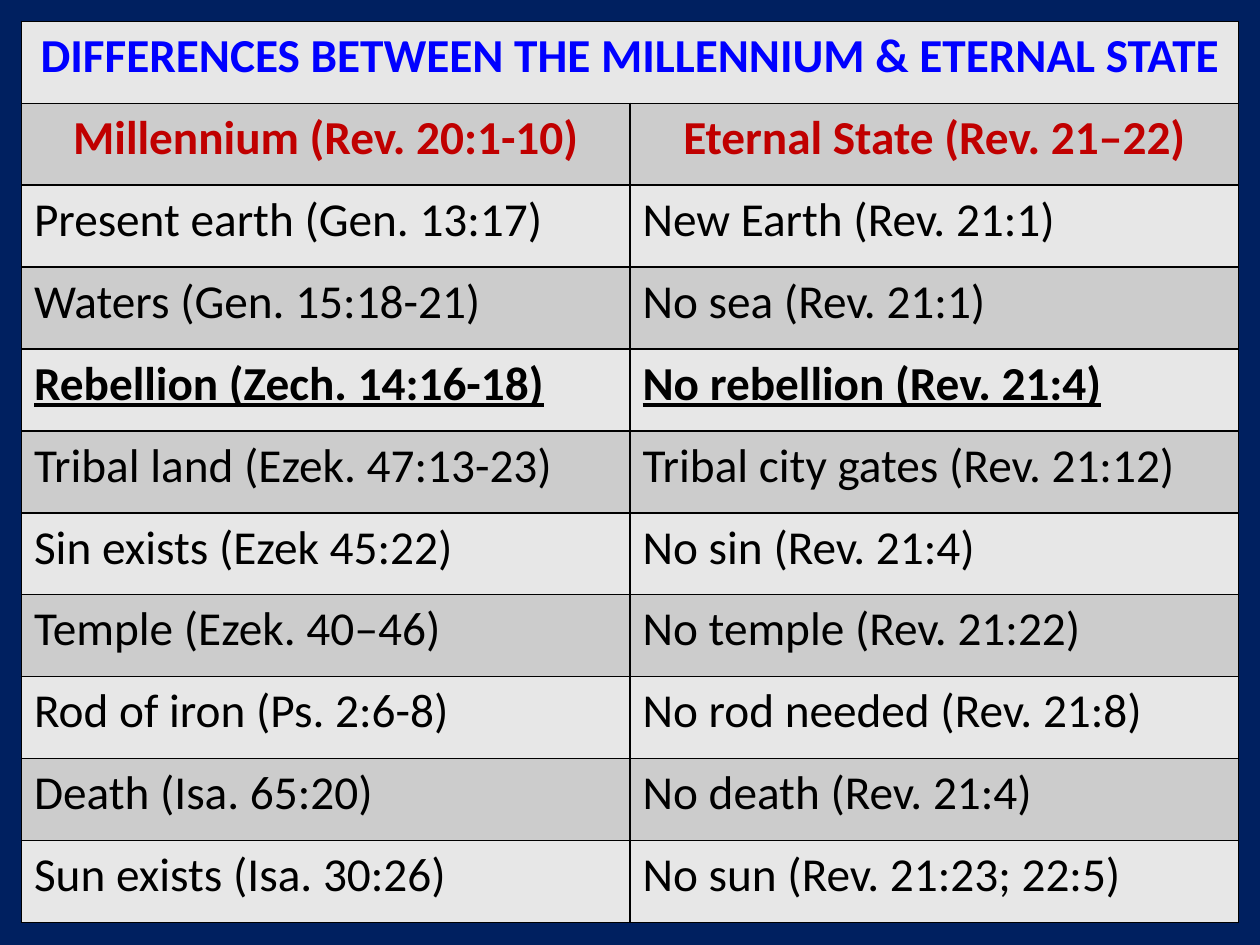
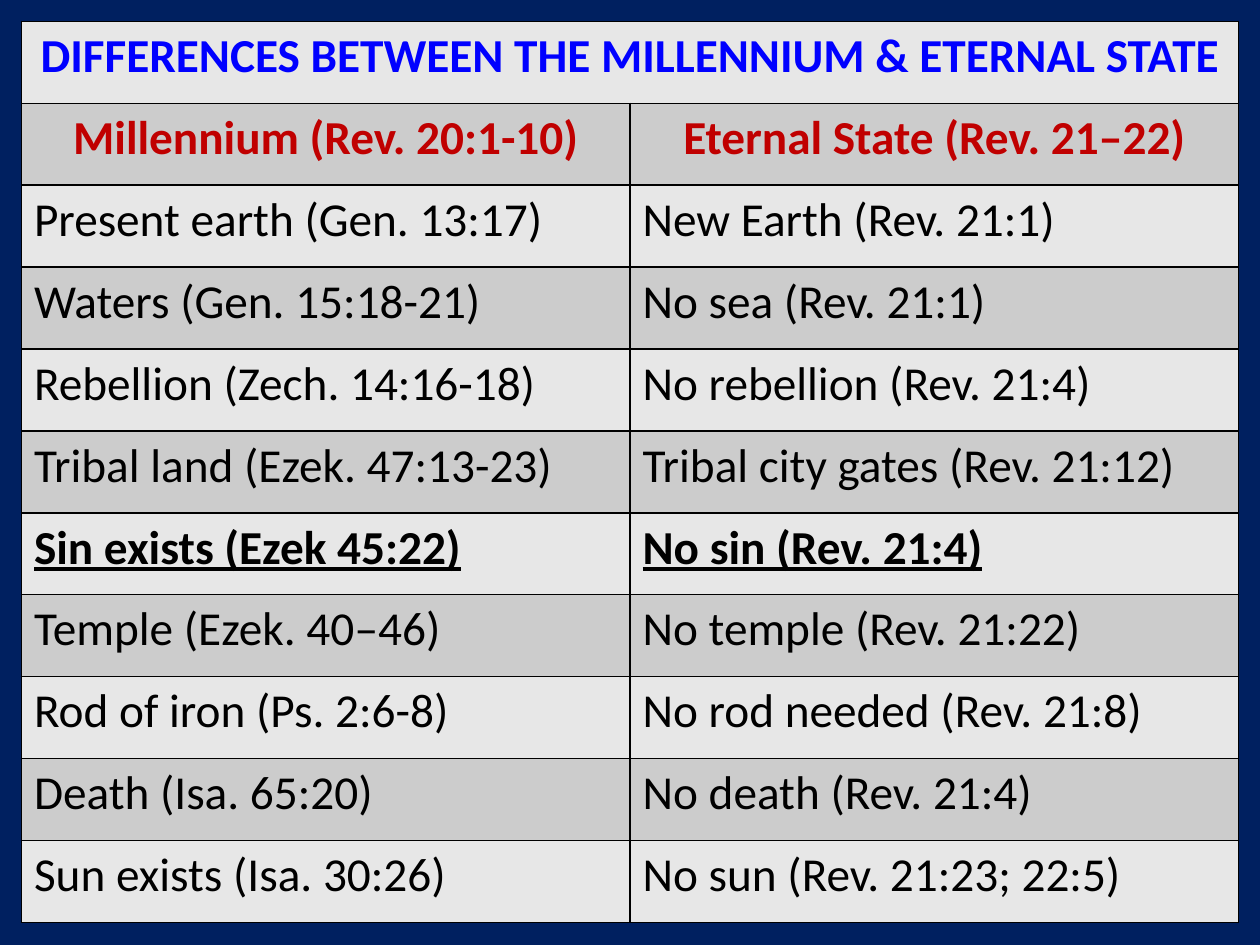
from lxml.etree import SubElement
from pptx import Presentation
from pptx.dml.color import RGBColor as RGB
from pptx.enum.text import MSO_ANCHOR as Anchor, PP_ALIGN as Align
from pptx.oxml.ns import qn
from pptx.util import Inches, Pt

COLORS = {
    "back": "002060",
    "light": "E7E7E7",
    "dark": "CCCCCC",
    "title": "0000FF",
    "head": "C00000",
    "text": "000000",
    "line": "000000",
}
FONT = "Calibri"
SIZE = 27
EDGE = 0.17
COL_W = 4.83
ROW_H = 0.65

TITLE = "DIFFERENCES BETWEEN THE MILLENNIUM & ETERNAL STATE"
HEADS = ("Millennium (Rev. 20:1-10)", "Eternal State (Rev. 21‒22)")
PAIRS = [
    ("Present earth (Gen. 13:17)", "New Earth (Rev. 21:1)"),
    ("Waters (Gen. 15:18-21)", "No sea (Rev. 21:1)"),
    ("Rebellion (Zech. 14:16-18)", "No rebellion (Rev. 21:4)"),
    ("Tribal land (Ezek. 47:13-23)", "Tribal city gates (Rev. 21:12)"),
    ("Sin exists (Ezek 45:22)", "No sin (Rev. 21:4)"),
    ("Temple (Ezek. 40‒46)", "No temple (Rev. 21:22)"),
    ("Rod of iron (Ps. 2:6-8)", "No rod needed (Rev. 21:8)"),
    ("Death (Isa. 65:20)", "No death (Rev. 21:4)"),
    ("Sun exists (Isa. 30:26)", "No sun (Rev. 21:23; 22:5)"),
]
# Index in PAIRS of the row stressed on each slide
STRESSED = (2, 4)


def color(name):
    return RGB.from_string(COLORS[name])


def write(cell, text, tint="text", bold=False, under=False, align=Align.LEFT):
    para = cell.text_frame.paragraphs[0]
    para.alignment = align
    run = para.add_run()
    run.text = text
    font = run.font
    font.name, font.size = FONT, Pt(SIZE)
    font.bold, font.underline = bold, under
    font.color.rgb = color(tint)


def add_border(cell):
    props = cell._tc.get_or_add_tcPr()
    for side in ("lnL", "lnR", "lnT", "lnB"):
        line = SubElement(props, qn(f"a:{side}"), w=str(Pt(1)))
        fill = SubElement(line, qn("a:solidFill"))
        SubElement(fill, qn("a:srgbClr"), val=COLORS["line"])


def style(cell, shade):
    """Give a cell its border, fill and top anchor."""
    add_border(cell)
    cell.fill.solid()
    cell.fill.fore_color.rgb = color(shade)
    cell.vertical_anchor = Anchor.TOP


def add_grid(slide, count):
    """Add a table of two columns with shades that alternate by row."""
    frame = slide.shapes.add_table(
        count, 2, Inches(EDGE), Inches(EDGE),
        Inches(2 * COL_W), Inches(count * ROW_H))
    table = frame.table
    for col in table.columns:
        col.width = Inches(COL_W)
    for i, row in enumerate(table.rows):
        row.height = Inches(ROW_H)
        for cell in row.cells:
            style(cell, "dark" if i % 2 else "light")
    return table


def add_slide(deck, stressed):
    slide = deck.slides.add_slide(deck.slide_layouts[6])
    back = slide.background.fill
    back.solid()
    back.fore_color.rgb = color("back")

    table = add_grid(slide, len(PAIRS) + 2)
    top = table.cell(0, 0)
    top.merge(table.cell(0, 1))
    write(top, TITLE, tint="title", bold=True, align=Align.CENTER)
    for col, head in enumerate(HEADS):
        write(table.cell(1, col), head, tint="head", bold=True,
              align=Align.CENTER)
    for i, pair in enumerate(PAIRS):
        mark = i == stressed
        for col, text in enumerate(pair):
            write(table.cell(i + 2, col), text, bold=mark, under=mark)


def main():
    deck = Presentation()
    deck.slide_width, deck.slide_height = Inches(10), Inches(7.5)
    for stressed in STRESSED:
        add_slide(deck, stressed)
    deck.save("out.pptx")


if __name__ == "__main__":
    main()
